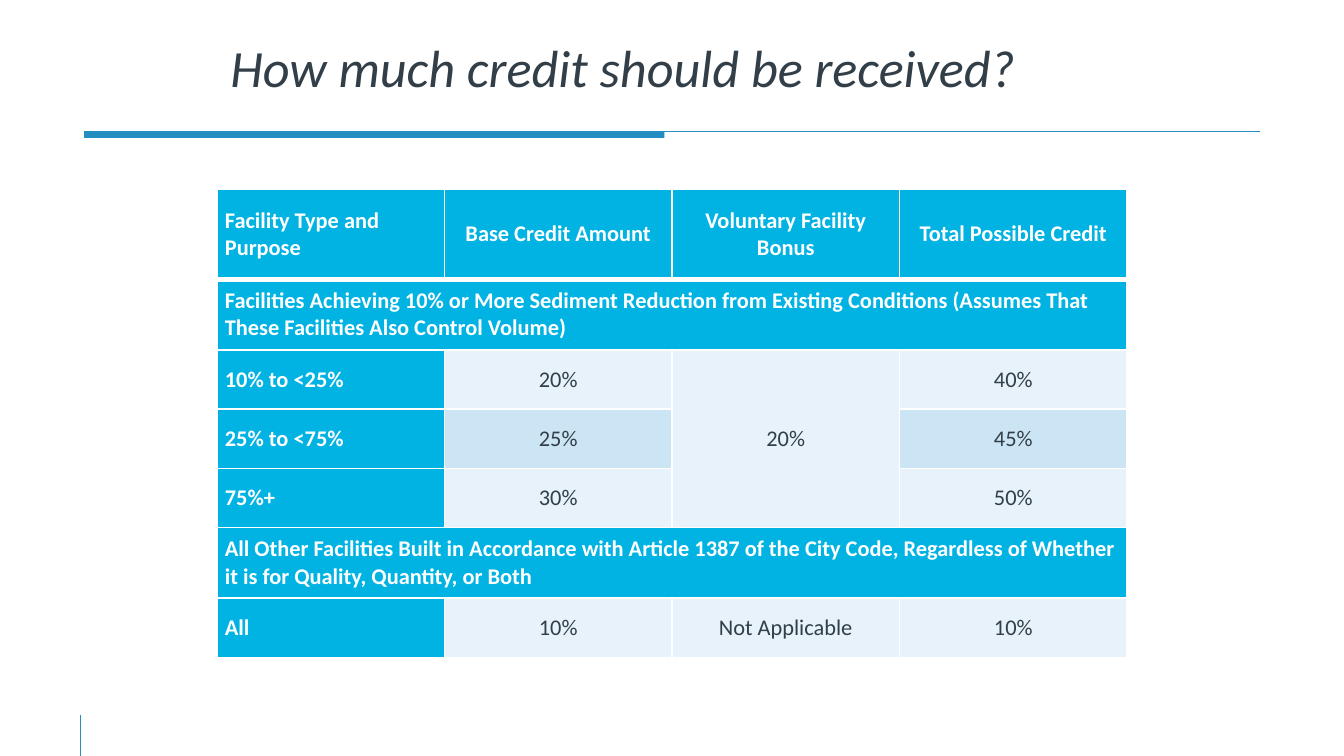
from dataclasses import dataclass

from lxml.etree import SubElement
from pptx import Presentation
from pptx.dml.color import RGBColor
from pptx.enum.shapes import MSO_CONNECTOR, MSO_SHAPE
from pptx.enum.text import MSO_ANCHOR, PP_ALIGN
from pptx.oxml.ns import qn
from pptx.util import Cm, Pt


@dataclass(frozen=True)
class Theme:
    font: str = "Calibri"
    ink: str = "323E48"
    white: str = "FFFFFF"
    accent: str = "248DC1"
    heading: str = "00B3E3"
    pale: str = "E7F2FA"
    band: str = "CCE5F4"
    title_size: float = 28
    table_size: float = 12
    rule_width: float = 0.75
    border_width: float = 1
    header_border_width: float = 3


def apply_format(target, values):
    for name, value in values.items():
        setattr(target, name, value)


class CreditSlide:
    def __init__(self, deck, theme):
        self.theme = theme
        self.slide = deck.slides.add_slide(deck.slide_layouts[5])

    def styled_text(self, frame, text, size, color, align, **font_format):
        frame.text = text
        paragraph = frame.paragraphs[0]
        paragraph.alignment = align
        run_font = paragraph.runs[0].font
        apply_format(run_font, {"name": self.theme.font, "size": Pt(size), **font_format})
        run_font.color.rgb = RGBColor.from_string(color)

    def title(self, text, left, top, width, height):
        heading = self.slide.shapes.title
        apply_format(heading, {"left": Cm(left), "top": Cm(top),
                               "width": Cm(width), "height": Cm(height)})
        heading.text_frame.vertical_anchor = MSO_ANCHOR.MIDDLE
        self.styled_text(heading.text_frame, text, self.theme.title_size,
                         self.theme.ink, PP_ALIGN.LEFT, italic=True)

    def rule(self, x1, y1, x2, y2):
        rule = self.slide.shapes.add_connector(
            MSO_CONNECTOR.STRAIGHT, Cm(x1), Cm(y1), Cm(x2), Cm(y2))
        rule.line.color.rgb = RGBColor.from_string(self.theme.accent)
        rule.line.width = Pt(self.theme.rule_width)
        SubElement(rule._element.spPr, qn("a:effectLst"))

    def bar(self, left, top, width, height):
        bar = self.slide.shapes.add_shape(
            MSO_SHAPE.RECTANGLE, Cm(left), Cm(top), Cm(width), Cm(height))
        bar.shadow.inherit = False
        bar.fill.solid()
        bar.fill.fore_color.rgb = RGBColor.from_string(self.theme.accent)
        bar.line.fill.background()

    def borders(self, cell, widths):
        properties = cell._tc.get_or_add_tcPr()
        for side, width in widths.items():
            edge = SubElement(properties, qn(f"a:ln{side}"), w=str(Pt(width)))
            fill = SubElement(edge, qn("a:solidFill"))
            SubElement(fill, qn("a:srgbClr"), val=self.theme.white)

    def cell(self, cell, text, row, column, is_heading, fill):
        thin, thick = self.theme.border_width, self.theme.header_border_width
        self.borders(cell, {"L": thin, "R": thin,
                            "T": thick if row == 1 else thin,
                            "B": thick if row == 0 else thin})
        cell.fill.solid()
        cell.fill.fore_color.rgb = RGBColor.from_string(fill)
        apply_format(cell, {"vertical_anchor": MSO_ANCHOR.MIDDLE,
                            "margin_left": Cm(0.15), "margin_right": Cm(0.15),
                            "margin_top": Cm(0.15), "margin_bottom": Cm(0.15)})
        if text:
            self.styled_text(cell.text_frame, text, self.theme.table_size,
                             self.theme.white if is_heading else self.theme.ink,
                             PP_ALIGN.CENTER if column else PP_ALIGN.LEFT,
                             bold=is_heading)

    def table(self, rows, heights, merges, banded_rows, left, top, width):
        column_count = len(rows[0])
        table = self.slide.shapes.add_table(
            len(rows), column_count, Cm(left), Cm(top), Cm(width), Cm(sum(heights))).table
        apply_format(table, {"first_row": False, "horz_banding": False})
        for column in table.columns:
            column.width = Cm(width / column_count)
        for row, height in zip(table.rows, heights):
            row.height = Cm(height)
        for first, last in merges:
            table.cell(*first).merge(table.cell(*last))
        for row, texts in enumerate(rows):
            is_section = not any(texts[1:])
            for column in range(column_count):
                is_heading = row == 0 or column == 0 or is_section
                body_fill = self.theme.band if row in banded_rows else self.theme.pale
                self.cell(table.cell(row, column), texts[column], row, column, is_heading,
                          self.theme.heading if is_heading else body_fill)


CREDITS = [
    ("Facility Type and Purpose", "Base Credit Amount",
     "Voluntary Facility Bonus", "Total Possible Credit"),
    ("Facilities Achieving 10% or More Sediment Reduction from Existing Conditions "
     "(Assumes That These Facilities Also Control Volume)", "", "", ""),
    ("10% to <25%", "20%", "20%", "40%"),
    ("25% to <75%", "25%", "", "45%"),
    ("75%+", "30%", "", "50%"),
    ("All Other Facilities Built in Accordance with Article 1387 of the City Code, "
     "Regardless of Whether it is for Quality, Quantity, or Both", "", "", ""),
    ("All", "10%", "Not Applicable", "10%"),
]
HEIGHTS = [1.7, 1.32, 1.12, 1.12, 1.12, 1.32, 1.12]
MERGES = [((1, 0), (1, 3)), ((5, 0), (5, 3)), ((2, 2), (4, 2))]


def main():
    deck = Presentation()
    apply_format(deck, {"slide_width": Cm(25.4), "slide_height": Cm(14.29)})
    credit = CreditSlide(deck, Theme())
    credit.rule(1.59, 2.48, 23.81, 2.48)
    credit.rule(1.52, 13.51, 1.52, 14.29)
    credit.bar(1.59, 2.48, 10.97, 0.13)
    credit.title("How much credit should be received?", 4.1, 0.2, 17.2, 2.13)
    credit.table(CREDITS, HEIGHTS, MERGES, {3}, 4.1, 3.58, 17.2)
    deck.save("out.pptx")


if __name__ == "__main__":
    main()
